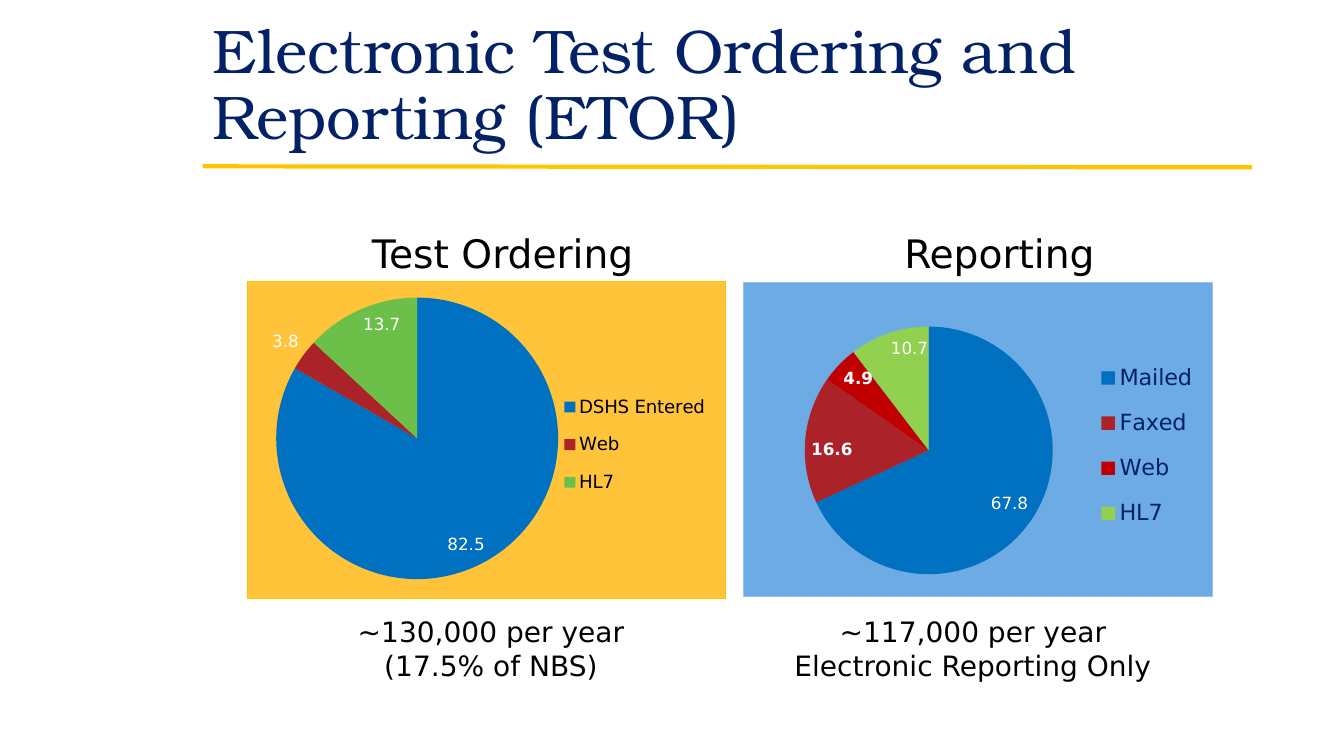
from lxml import etree
from pptx import Presentation
from pptx.chart.data import CategoryChartData
from pptx.dml.color import RGBColor
from pptx.enum.chart import XL_CHART_TYPE as Kind, XL_LABEL_POSITION as Pos
from pptx.enum.chart import XL_LEGEND_POSITION as Side
from pptx.enum.shapes import MSO_CONNECTOR as Conn
from pptx.enum.text import MSO_ANCHOR as Anchor, MSO_AUTO_SIZE as Fit, PP_ALIGN as Align
from pptx.oxml import parse_xml
from pptx.oxml.ns import qn
from pptx.util import Inches, Pt

# Content
SANS, SERIF = "DejaVu Sans", "TeX Gyre Bonum"
NAVY, BLACK, WHITE, GOLD = "022167", "000000", "FFFFFF", "FFC600"
TITLE = "Electronic Test Ordering and Reporting (ETOR)"

# Slices: name, value, colour, label text (None shows the value), label place
PANELS = [
    dict(head="Test Ordering", head_at=(3.59, 2.23, 3, 0.57),
         note=["~130,000 per year", "(17.5% of NBS)"], note_at=(3.38, 6.05, 2.98, 0.77),
         at=(2.45, 2.79, 4.75, 3.15), fill="FFC439", edge="FFC000",
         plot=(0.06, 0.05, 0.59, 0.89), key=(0.65, 0.31, 0.32, 0.41),
         key_side=Side.BOTTOM, key_size=13, key_ink=BLACK,
         slices=[("DSHS Entered", 83.3, "0070C0", "82.5", Pos.INSIDE_END),
                 ("Web", 3.6, "AB2328", "3.8", Pos.OUTSIDE_END),
                 ("HL7", 13.1, "6CC04A", "13.7", Pos.INSIDE_END)]),
    dict(head="Reporting", head_at=(8.87, 2.23, 2.11, 0.57),
         note=["~117,000 per year", "Electronic Reporting Only"],
         note_at=(7.72, 6.05, 3.86, 0.77),
         at=(7.37, 2.8, 4.66, 3.12), fill="6DABE4", edge="9CBAFD",
         plot=(0.13, 0.14, 0.53, 0.79), key=(0.75, 0.2, 0.22, 0.64),
         key_side=Side.RIGHT, key_size=16, key_ink=NAVY,
         slices=[("Mailed", 68.1, "0070C0", "67.8", Pos.INSIDE_END),
                 ("Faxed", 16.6, "AB2328", None, Pos.INSIDE_END),
                 ("Web", 4.9, "C00000", None, Pos.INSIDE_END),
                 ("HL7", 10.4, "92D050", "10.7", Pos.INSIDE_END)]),
]

C_NS = 'xmlns:c="http://schemas.openxmlformats.org/drawingml/2006/chart"'
A_NS = 'xmlns:a="http://schemas.openxmlformats.org/drawingml/2006/main"'


def ink(code):
    return RGBColor.from_string(code)


def style(font, size, code, face=SANS, bold=False):
    font.size, font.name, font.bold = Pt(size), face, bold
    font.color.rgb = ink(code)


def box(slide, at, lines, size, align):
    frame = slide.shapes.add_textbox(*map(Inches, at)).text_frame
    frame.word_wrap = False
    for i, line in enumerate(lines):
        para = frame.paragraphs[0] if i == 0 else frame.add_paragraph()
        para.alignment = align
        run = para.add_run()
        run.text = line
        style(run.font, size, BLACK)


def layout(rect, inner=False):
    """Fixed place of a chart part, as shares of the chart's size."""
    target = '<c:layoutTarget val="inner"/>' if inner else ""
    modes = '<c:xMode val="edge"/><c:yMode val="edge"/>'
    sizes = "".join(f'<c:{k} val="{v}"/>' for k, v in zip("xywh", rect))
    return parse_xml(f"<c:layout {C_NS}><c:manualLayout>{target}{modes}{sizes}"
                     "</c:manualLayout></c:layout>")


def place(part, index, node):
    for old in part.findall(qn("c:layout")):
        part.remove(old)
    part.insert(index, node)


def pie(slide, panel):
    names, values, *_ = zip(*panel["slices"])
    data = CategoryChartData(number_format="0.0")
    data.categories = names
    data.add_series("Series 1", values)
    chart = slide.shapes.add_chart(Kind.PIE, *map(Inches, panel["at"]), data).chart
    style(chart.font, 10, NAVY)
    chart.has_title = False

    # Legend
    chart.has_legend = True
    key = chart.legend
    key.position = panel["key_side"]
    key.include_in_layout = False
    style(key.font, panel["key_size"], panel["key_ink"])

    # Labels and slices
    series = chart.plots[0].series[0]
    labels = series.data_labels
    labels.show_value = True
    labels.number_format, labels.number_format_is_linked = "0.0", False
    labels.position = Pos.INSIDE_END
    style(labels.font, 12, WHITE, bold=True)
    for i, (_, _, code, text, pos) in enumerate(panel["slices"]):
        point = series.points[i]
        point.format.fill.solid()
        point.format.fill.fore_color.rgb = ink(code)
        if text:
            run = point.data_label.text_frame.paragraphs[0].add_run()
            run.text = text
            style(run.font, 12, WHITE)
            point.data_label.position = pos

    # Fixed places and backdrop
    body = chart.element.find(qn("c:chart"))
    place(body.find(qn("c:plotArea")), 0, layout(panel["plot"], True))
    place(body.find(qn("c:legend")), 1, layout(panel["key"]))
    paint = '<a:solidFill><a:srgbClr val="{}"/></a:solidFill>'
    body.addnext(parse_xml(
        f'<c:spPr {C_NS} {A_NS}>{paint.format(panel["fill"])}'
        f'<a:ln w="{Pt(0.75)}">{paint.format(panel["edge"])}</a:ln></c:spPr>'))


def main():
    deck = Presentation()
    deck.slide_width, deck.slide_height = Inches(13.33), Inches(7.5)
    slide = deck.slides.add_slide(deck.slide_layouts[5])

    # Title and rule
    title = slide.shapes.title
    title.left, title.top, title.width, title.height = map(Inches, (2.01, 0.12, 10.4, 1.45))
    frame = title.text_frame
    frame.word_wrap, frame.auto_size = True, Fit.NONE
    frame.vertical_anchor = Anchor.BOTTOM
    para = frame.paragraphs[0]
    para.alignment, para.line_spacing = Align.LEFT, 0.9
    run = para.add_run()
    run.text = TITLE
    style(run.font, 44, NAVY, SERIF)
    rule = slide.shapes.add_connector(Conn.STRAIGHT, *map(Inches, (2.01, 1.65, 12.42, 1.66)))
    rule.line.width = Pt(3)
    rule.line.color.rgb = ink(GOLD)
    etree.SubElement(rule._element.spPr, qn("a:effectLst"))

    # Heading, chart and note of each panel
    for panel in PANELS:
        box(slide, panel["head_at"], [panel["head"]], 28, Align.LEFT)
        box(slide, panel["note_at"], panel["note"], 20, Align.CENTER)
        pie(slide, panel)

    deck.save("out.pptx")


if __name__ == "__main__":
    main()
